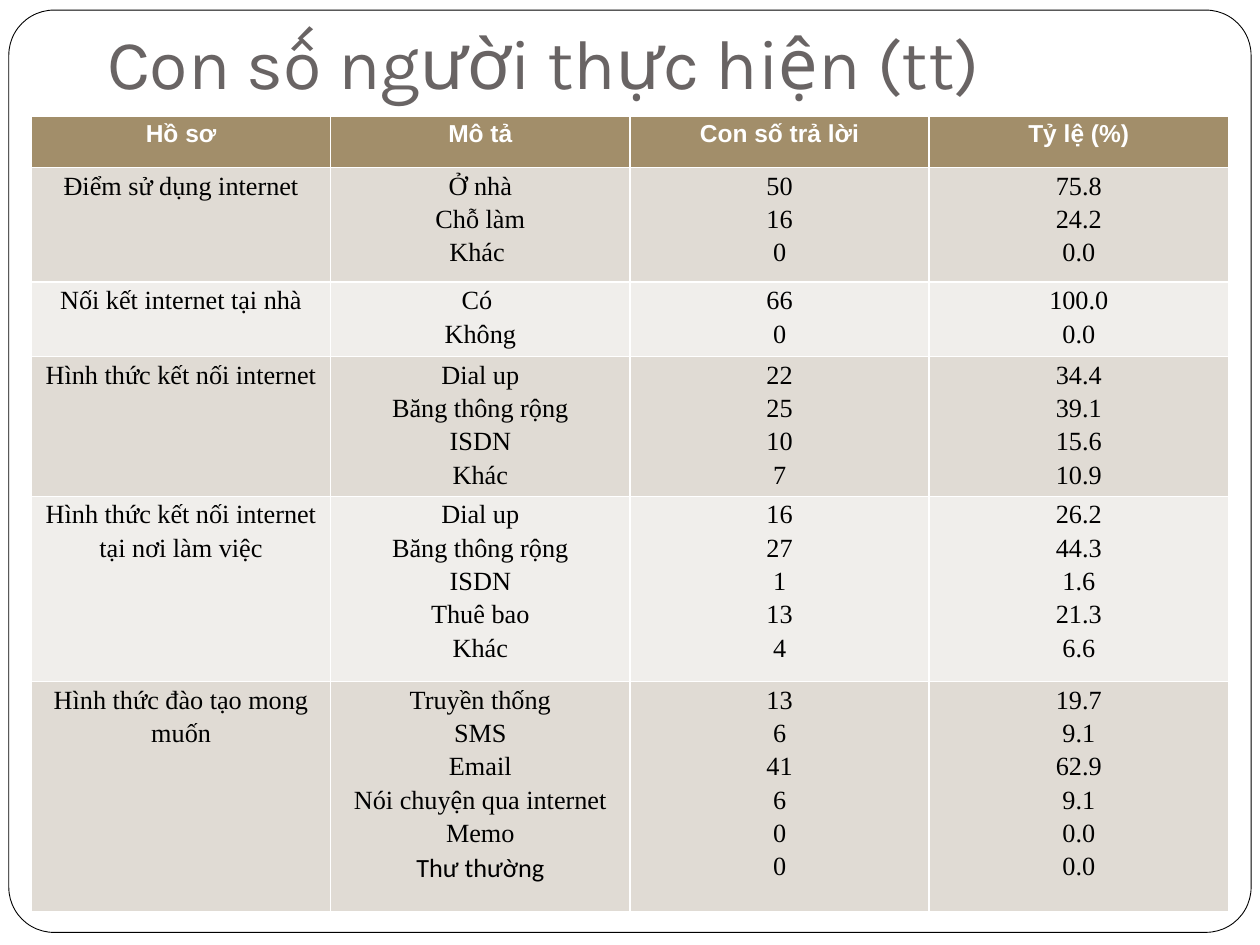
from pptx import Presentation
from pptx.dml.color import RGBColor
from pptx.enum.shapes import MSO_SHAPE
from pptx.enum.text import MSO_ANCHOR, MSO_AUTO_SIZE, PP_ALIGN
from pptx.util import Inches, Pt

WHITE = RGBColor(0xFF, 0xFF, 0xFF)
BLACK = RGBColor(0, 0, 0)
GREY = RGBColor(0x69, 0x64, 0x64)
BROWN = RGBColor(0xA2, 0x8E, 0x6A)
SAND = RGBColor(0xE0, 0xDB, 0xD4)
CREAM = RGBColor(0xF0, 0xEE, 0xEB)

HEADS = ["Hồ sơ", "Mô tả", "Con số trả lời", "Tỷ lệ (%)"]
GROUPS = [
    ("Điểm sử dụng internet", 0.91,
     [("Ở nhà", "50", "75.8"), ("Chỗ làm", "16", "24.2"), ("Khác ", "0", "0.0")]),
    ("Nối kết internet tại nhà", 0.59,
     [("Có ", "66", "100.0"), ("Không", "0", "0.0")]),
    ("Hình thức kết nối internet", 1.11,
     [("Dial up", "22", "34.4"), ("Băng thông rộng", "25", "39.1"),
      ("ISDN", "10", "15.6"), ("Khác", "7", "10.9")]),
    ("Hình thức kết nối internet tại nơi làm việc", 1.47,
     [("Dial up", "16", "26.2"), ("Băng thông rộng", "27", "44.3"),
      ("ISDN", "1", "1.6"), ("Thuê bao", "13", "21.3"), ("Khác", "4", "6.6")]),
    ("Hình thức đào tạo mong muốn", 1.83,
     [("Truyền thống", "13", "19.7"), ("SMS", "6", "9.1"),
      ("Email", "41", "62.9"), ("Nói chuyện qua internet", "6", "9.1"),
      ("Memo", "0", "0.0"), ("Thư thường", "0", "0.0")]),
]


def add_frame(slide, box):
    """Draw the rounded frame behind the title."""
    frame = slide.shapes.add_shape(MSO_SHAPE.ROUNDED_RECTANGLE, *map(Inches, box))
    frame.adjustments[0] = 0.049
    frame.shadow.inherit = False
    frame.fill.solid()
    frame.fill.fore_color.rgb = WHITE
    frame.line.color.rgb = BLACK
    frame.line.width = Pt(0.5)
    slide.shapes.title.element.addprevious(frame.element)


def set_title(slide, box, text):
    """Place and format the title placeholder."""
    title = slide.shapes.title
    title.left, title.top, title.width, title.height = map(Inches, box)
    frame = title.text_frame
    frame.text = text
    frame.auto_size = MSO_AUTO_SIZE.NONE
    frame.vertical_anchor = MSO_ANCHOR.BOTTOM
    frame.margin_bottom = Inches(0.1)
    para = frame.paragraphs[0]
    para.alignment = PP_ALIGN.LEFT
    set_font(para.font, "Karla", 40, GREY)


def set_font(font, name, size, color, bold=False):
    """Set the face, size, colour and weight of a font."""
    font.name, font.size, font.bold = name, Pt(size), bold
    font.color.rgb = color


def fill_cell(cell, text, fill, *style):
    """Write centred lines into a filled cell."""
    cell.text = text
    cell.fill.solid()
    cell.fill.fore_color.rgb = fill
    cell.margin_left = cell.margin_right = Inches(0.07)
    cell.margin_top = cell.margin_bottom = 0
    for para in cell.text_frame.paragraphs:
        para.alignment = PP_ALIGN.CENTER
        para.line_spacing = 1.15
        set_font(para.font, *style)


def add_grid(slide, box):
    """Build the table of answers, one row for each group."""
    shape = slide.shapes.add_table(len(GROUPS) + 1, len(HEADS), *map(Inches, box))
    table = shape.table
    table.rows[0].height = Inches(0.41)
    for col, head in enumerate(HEADS):
        fill_cell(table.cell(0, col), head, BROWN, "Arial", 14, WHITE, True)
    for row, (name, height, items) in enumerate(GROUPS, 1):
        table.rows[row].height = Inches(height)
        fill = SAND if row % 2 else CREAM
        texts = [name] + ["\n".join(part) for part in zip(*items)]
        for col, text in enumerate(texts):
            fill_cell(table.cell(row, col), text, fill, "Times New Roman", 15, BLACK)
    last = table.cell(len(GROUPS), 1).text_frame.paragraphs[-1]
    last.font.name = "Calibri"


def main():
    """Build and save the slide."""
    deck = Presentation()
    deck.slide_width, deck.slide_height = Inches(10), Inches(7.5)
    slide = deck.slides.add_slide(deck.slide_layouts[5])
    add_frame(slide, (0.07, 0.08, 9.86, 7.32))
    set_title(slide, (0.75, -0.33, 8.75, 1.25), "Con số người thực hiện (tt)")
    add_grid(slide, (0.25, 0.92, 9.5, 6.32))
    deck.save("out.pptx")


if __name__ == "__main__":
    main()
